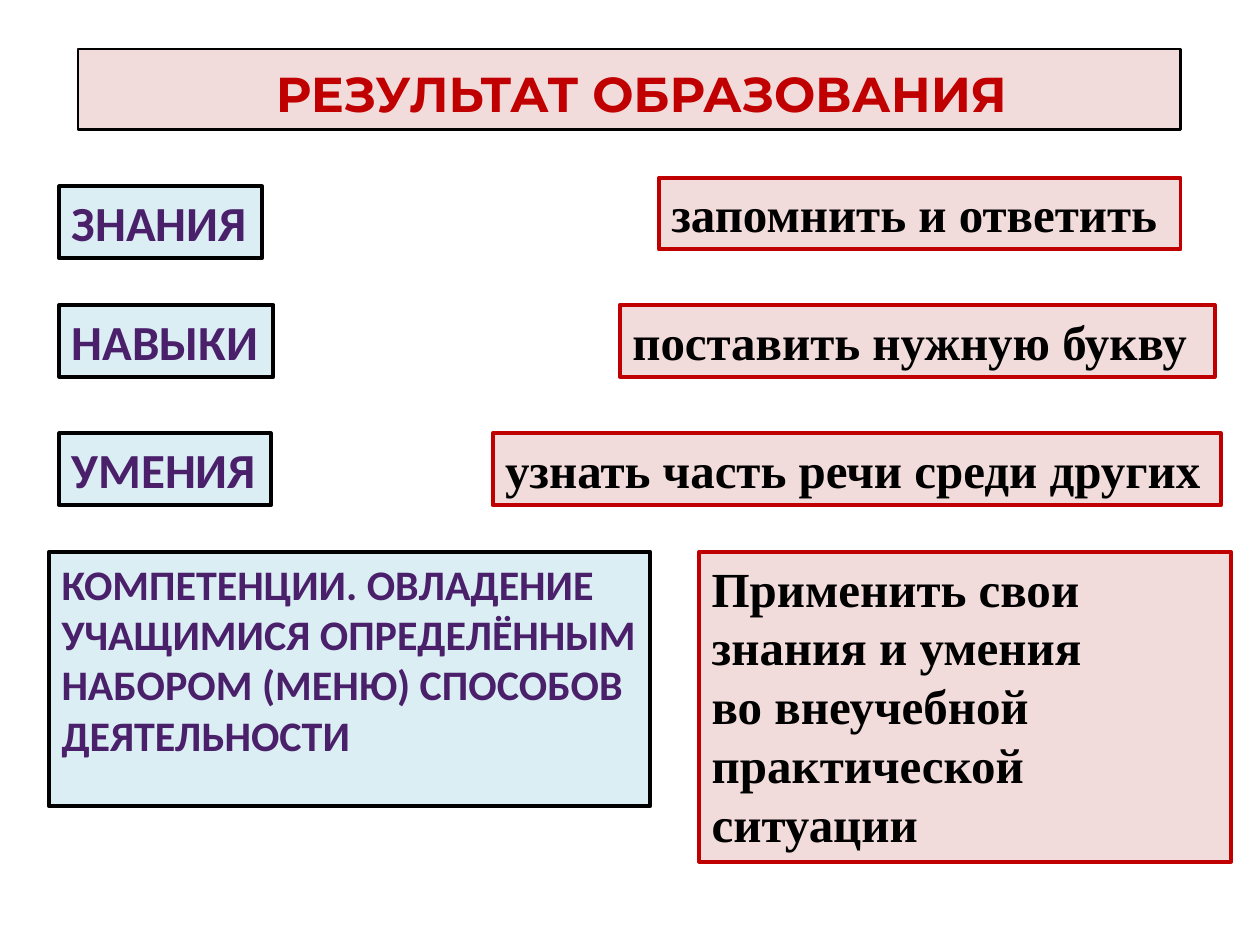
from pptx import Presentation
from pptx.dml.color import RGBColor
from pptx.enum.shapes import MSO_SHAPE
from pptx.enum.text import MSO_ANCHOR, MSO_AUTO_SIZE, PP_ALIGN
from pptx.util import Inches, Pt

RECTANGLE = MSO_SHAPE.RECTANGLE
TOP = MSO_ANCHOR.TOP
NO_FIT = MSO_AUTO_SIZE.NONE
LEFT, CENTER = PP_ALIGN.LEFT, PP_ALIGN.CENTER

BLACK, RED, PURPLE = "000000", "C00000", "4A206A"
PINK, BLUE = "F2DCDB", "DBEEF4"
SANS, SERIF, HEADING = "Calibri", "Times New Roman", "Montserrat"


def color(value):
    return RGBColor.from_string(value)


class SlideBuilder:
    """Hold the slide style and draw its title and framed boxes."""

    def __init__(self, deck):
        self.page = deck.slides.add_slide(deck.slide_layouts[5])

    def frame(self, box, fill, line, width):
        box.fill.solid()
        box.fill.fore_color.rgb = color(fill)
        box.line.color.rgb = color(line)
        box.line.width = Pt(width)

    def add_text(self, box, lines, font, size, ink, align=LEFT):
        text = box.text_frame
        text.auto_size = NO_FIT
        text.word_wrap = True
        text.vertical_anchor = TOP
        text.margin_right = Inches(0.05)
        for index, line in enumerate(lines):
            para = text.add_paragraph() if index else text.paragraphs[0]
            para.alignment = align
            span = para.add_run()
            span.text = line
            span.font.name = font
            span.font.size = Pt(size)
            span.font.bold = True
            span.font.color.rgb = color(ink)

    def title(self, words, left, top, width, height):
        box = self.page.shapes.title
        box.left, box.top = Inches(left), Inches(top)
        box.width, box.height = Inches(width), Inches(height)
        self.frame(box, PINK, BLACK, 1.5)
        self.add_text(box, [words], HEADING, 28, RED, CENTER)
        box.text_frame.margin_left = Inches(0.24)
        box.text_frame.margin_top = Inches(0.11)

    def box(self, left, top, width, height, fill, line, *text_style):
        box = self.page.shapes.add_shape(
            RECTANGLE, Inches(left), Inches(top), Inches(width), Inches(height)
        )
        box.shadow.inherit = False
        self.frame(box, fill, line, 2.25)
        self.add_text(box, *text_style)

    def outcome(self, left, top, width, height, lines, size=28):
        self.box(left, top, width, height, BLUE, BLACK, lines, SANS, size, PURPLE)

    def action(self, left, top, width, height, lines):
        self.box(left, top, width, height, PINK, RED, lines, SERIF, 28, BLACK)


def main():
    deck = Presentation()
    deck.slide_width, deck.slide_height = Inches(10), Inches(7.5)
    slide = SlideBuilder(deck)
    slide.title("РЕЗУЛЬТАТ ОБРАЗОВАНИЯ", 0.62, 0.39, 8.75, 0.64)

    row_height = 0.57
    outcomes = [
        ("ЗНАНИЯ", 1.48, 1.61),
        ("НАВЫКИ", 2.42, 1.7),
        ("УМЕНИЯ", 3.44, 1.68),
    ]
    for words, top, width in outcomes:
        slide.outcome(0.47, top, width, row_height, [words])

    actions = [
        ("запомнить и ответить", 5.23, 1.41, 4.14),
        ("поставить нужную букву", 4.92, 2.42, 4.72),
        ("узнать часть речи среди других", 3.91, 3.44, 5.78),
    ]
    for words, left, top, width in actions:
        slide.action(left, top, width, row_height, [words])

    competence = (
        "КОМПЕТЕНЦИИ. ОВЛАДЕНИЕ УЧАЩИМИСЯ ОПРЕДЕЛЁННЫМ "
        "НАБОРОМ (МЕНЮ) СПОСОБОВ ДЕЯТЕЛЬНОСТИ"
    )
    practice = [
        "Применить свои знания и умения",
        "во внеучебной практической ситуации",
    ]
    slide.outcome(0.39, 4.38, 4.77, 2.02, [competence], 24)
    slide.action(5.55, 4.38, 4.22, 2.46, practice)
    deck.save("out.pptx")


if __name__ == "__main__":
    main()
